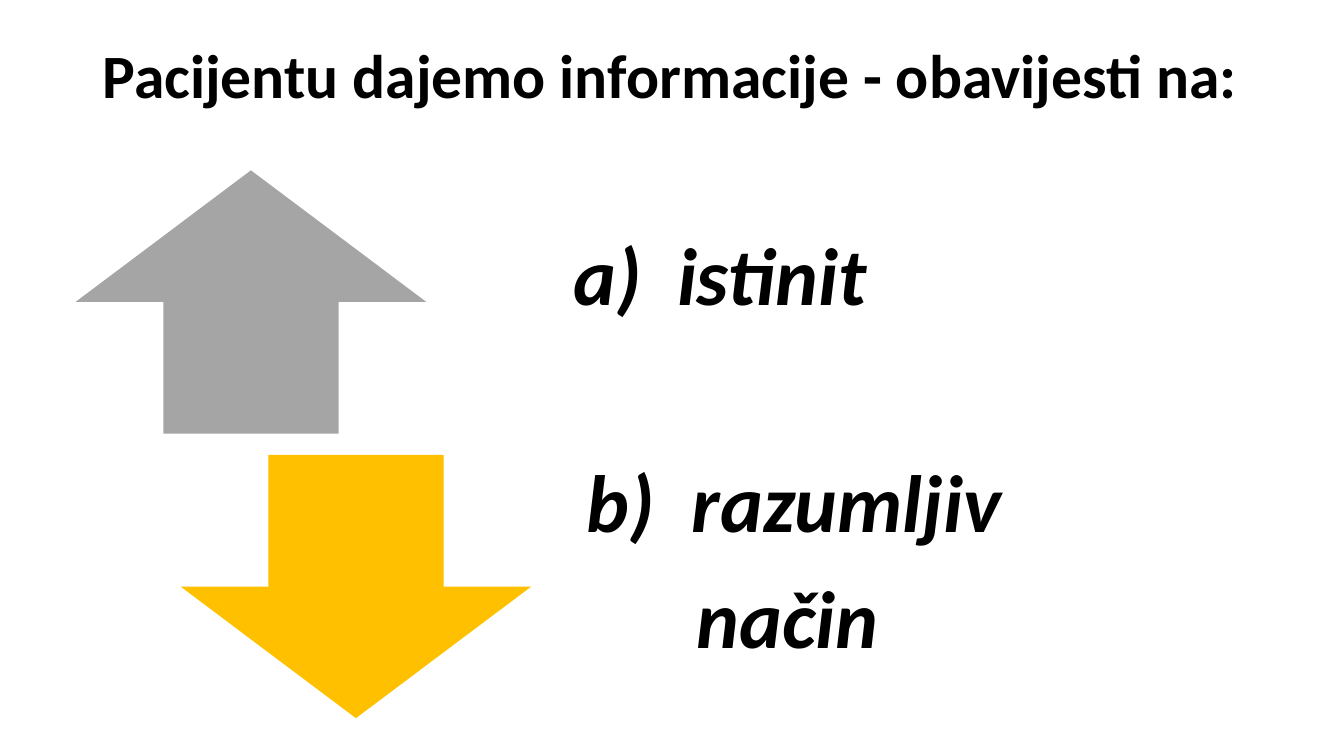
from pptx import Presentation
from pptx.dml.color import RGBColor
from pptx.enum.shapes import MSO_SHAPE
from pptx.enum.text import MSO_ANCHOR, PP_ALIGN
from pptx.util import Pt

BLACK = RGBColor(0x00, 0x00, 0x00)
GREY = RGBColor(0xA5, 0xA5, 0xA5)
AMBER = RGBColor(0xFF, 0xC0, 0x00)

ARROW_WIDTH, ROW_HEIGHT = 250.5, 188
TEXT_OFFSET, TEXT_WIDTH = 257.75, 484
TEXT_INSET = 32.4


def format_paragraph(paragraph, size, italic):
    paragraph.alignment = PP_ALIGN.LEFT
    paragraph.line_spacing = 0.9
    for span in paragraph.runs:
        font = span.font
        font.name = "Calibri"
        font.size = Pt(size)
        font.bold = True
        font.italic = italic
        font.color.rgb = BLACK


deck = Presentation()
deck.slide_width, deck.slide_height = Pt(960), Pt(540)
page = deck.slides.add_slide(deck.slide_layouts[5])

title = page.shapes.title
title.left, title.top, title.width, title.height = Pt(66), Pt(28.8), Pt(828), Pt(104.4)
title.text_frame.text = "Pacijentu dajemo informacije - obavijesti na:"
title.text_frame.vertical_anchor = MSO_ANCHOR.TOP
format_paragraph(title.text_frame.paragraphs[0], 44, False)

# Each text line: wording, left margin, first-line indent
rows = [
    (MSO_SHAPE.UP_ARROW, GREY, 54, 121.7, [("a)\tistinit", 139.5, -74)]),
    (MSO_SHAPE.DOWN_ARROW, AMBER, 129, 325,
     [("b)\trazumljiv", 75, -75), ("način", 78.5, 0)]),
]

for arrow_type, color, left, top, lines in rows:
    arrow = page.shapes.add_shape(
        arrow_type, Pt(left), Pt(top), Pt(ARROW_WIDTH), Pt(ROW_HEIGHT))
    arrow.shadow.inherit = False
    arrow.fill.solid()
    arrow.fill.fore_color.rgb = color
    arrow.line.fill.background()

    box = page.shapes.add_textbox(
        Pt(left + TEXT_OFFSET), Pt(top), Pt(TEXT_WIDTH), Pt(ROW_HEIGHT))
    frame = box.text_frame
    frame.word_wrap = True
    frame.vertical_anchor = MSO_ANCHOR.MIDDLE
    frame.margin_left = frame.margin_right = frame.margin_bottom = Pt(TEXT_INSET)
    frame.margin_top = 0
    frame.text = "\n".join(wording for wording, _, _ in lines)
    for paragraph, (_, margin, indent) in zip(frame.paragraphs, lines):
        format_paragraph(paragraph, 58, True)
        paragraph.space_after = Pt(20)
        properties = paragraph._p.get_or_add_pPr()
        properties.set("marL", str(Pt(margin)))
        properties.set("indent", str(Pt(indent)))

deck.save("out.pptx")
